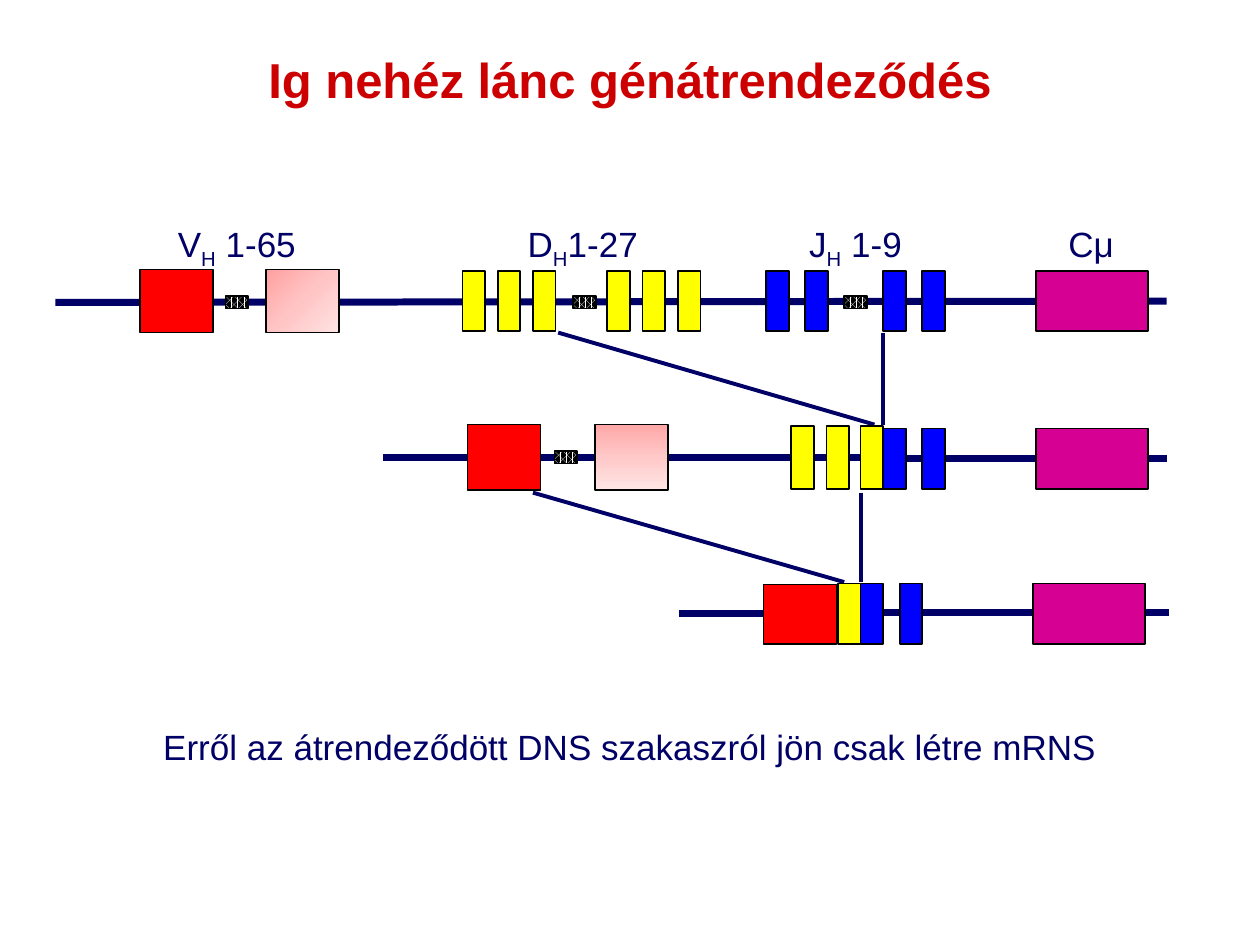
from copy import deepcopy

from pptx import Presentation
from pptx.dml.color import RGBColor
from pptx.enum.dml import MSO_PATTERN
from pptx.enum.shapes import MSO_CONNECTOR, MSO_SHAPE
from pptx.enum.text import PP_ALIGN
from pptx.oxml.ns import qn
from pptx.util import Inches, Pt
from lxml import etree

RECT = MSO_SHAPE.RECTANGLE
LINE = MSO_CONNECTOR.STRAIGHT
DOTS = MSO_PATTERN.PERCENT_70
CENTER = PP_ALIGN.CENTER

COLS, ROWS = 100, 75
CELL = Inches(0.1)
SEG = 1.8  # width of a D or J segment, in columns
GENE = 5.8  # width of a V gene
CONST = 8.9  # width of the constant gene

HUES = {
    "title": "CC0000", "ink": "000066", "edge": "000202",
    "V": "FF0000", "D": "FFFF00", "J": "0000FF", "C": "D60093",
    "white": "FFFFFF", "black": "000000",
}
FADES = {
    "top": ("FFA0A0", "FFC5C5", "FFE3E3"),
    "mid": ("FFA7A7", "FFC9C9", "FFE5E5"),
}


def hue(name):
    return RGBColor.from_string(HUES[name])


def cells(*sizes):
    """Turn columns and rows into slide lengths."""
    return [round(size * CELL) for size in sizes]


def add_text(slide, at, parts, size=20, color="ink", bold=False, wrap=False):
    """Write one centred paragraph; every second part is a subscript."""
    frame = slide.shapes.add_textbox(*cells(*at)).text_frame
    frame.word_wrap = wrap
    para = frame.paragraphs[0]
    para.alignment = CENTER
    font = para.font
    font.name, font.size, font.bold = "Arial", Pt(size), bold
    font.color.rgb = hue(color)
    for i, part in enumerate(parts):
        run = para.add_run()
        run.text = part
        if i % 2:
            run._r.get_or_add_rPr().set("baseline", "-25000")


def add_line(slide, start, end, width):
    line = slide.shapes.add_connector(LINE, *cells(*start, *end))
    line.line.color.rgb = hue("ink")
    line.line.width = Pt(width)
    etree.SubElement(line._element.spPr, qn("a:effectLst"))


def add_box(slide, left, top, width, height):
    box = slide.shapes.add_shape(RECT, *cells(left, top, width, height))
    box.shadow.inherit = False
    box.line.color.rgb = hue("edge")
    box.line.width = Pt(1)
    return box


def add_genes(slide, kind, lefts, top, width, height):
    for left in lefts:
        fill = add_box(slide, left, top, width, height).fill
        fill.solid()
        fill.fore_color.rgb = hue(kind)


def add_gaps(slide, lefts, top):
    """Dotted marks stand for the genes left out."""
    for left in lefts:
        fill = add_box(slide, left, top, SEG, 1).fill
        fill.patterned()
        fill.pattern = DOTS
        fill.fore_color.rgb = hue("white")
        fill.back_color.rgb = hue("black")


def add_fade(slide, at, tones, radial=False):
    box = add_box(slide, *at)
    box.fill.gradient()
    box.fill.gradient_angle = 270
    grad = box._element.spPr.find(qn("a:gradFill"))
    first = grad.find(qn("a:gsLst"))[0]
    middle = deepcopy(first)
    middle.set("pos", "50000")
    first.addnext(middle)
    for stop, tone in zip(box.fill.gradient_stops, FADES[tones]):
        stop.color.rgb = RGBColor.from_string(tone)
    if radial:
        grad.remove(grad.find(qn("a:lin")))
        ring = etree.SubElement(grad, qn("a:path"), path="circle")
        etree.SubElement(ring, qn("a:fillToRect"), r="100000", b="100000")


def add_germline(slide):
    add_line(slide, (4.4, 24), (92.6, 23.9), 4)
    labels = (
        (13, 11.6, ["V", "H", " 1-65"]),
        (40.8, 10.9, ["D", "H", "1-27"]),
        (63.2, 9.4, ["J", "H", " 1-9"]),
        (83.8, 5.6, ["Cμ"]),
    )
    for left, width, parts in labels:
        add_text(slide, (left, 17.2, width, 4.3), parts)
    add_genes(slide, "V", [11.1], 21.4, GENE, 5)
    add_fade(slide, (21.1, 21.4, GENE, 5), "top", radial=True)
    yellow = [start + 2.8 * i for start in (36.7, 48.2) for i in range(3)]
    add_genes(slide, "D", yellow, 21.5, SEG, 4.8)
    blue = [60.8 + 3.1 * i for i in (0, 1, 3, 4)]
    add_genes(slide, "J", blue, 21.5, SEG, 4.8)
    add_genes(slide, "C", [82.2], 21.5, CONST, 4.8)
    add_gaps(slide, [17.9, 45.5, 67], 23.5)


def add_joined(slide):
    """The row where D meets J."""
    add_line(slide, (30.4, 36.3), (70.1, 36.3), 4)
    add_line(slide, (70.1, 36.4), (92.6, 36.4), 4)
    add_genes(slide, "V", [37.1], 33.7, GENE, 5.2)
    add_fade(slide, (47.2, 33.7, GENE, 5.2), "mid")
    add_genes(slide, "J", [70.1, 73.2], 34, SEG, 4.8)
    add_genes(slide, "D", [62.8, 65.6, 68.3], 33.8, SEG, 5)
    add_genes(slide, "C", [82.2], 34, CONST, 4.8)
    add_gaps(slide, [44], 35.8)


def add_final(slide):
    """The row where V meets DJ."""
    add_line(slide, (53.9, 48.7), (66, 48.7), 4)
    add_line(slide, (68.3, 48.6), (92.8, 48.6), 4)
    add_genes(slide, "J", [68.3, 71.4], 46.3, SEG, 4.8)
    add_genes(slide, "D", [66.5], 46.3, SEG, 4.8)
    add_genes(slide, "V", [60.6], 46.4, GENE, 4.7)
    add_genes(slide, "C", [82], 46.3, CONST, 4.8)


def add_folds(slide):
    """Slanted and upright lines bound the stretch that is cut out."""
    for left, right, foot, top, base in (
        (44.3, 70.1, 69.4, 26.4, 33.7),
        (42.3, 68.3, 67, 39.1, 46.2),
    ):
        add_line(slide, (left, top), (foot, base), 2.25)
        add_line(slide, (right, top), (right, base), 2.25)


def main():
    deck = Presentation()
    deck.slide_width, deck.slide_height = cells(COLS, ROWS)
    slide = deck.slides.add_slide(deck.slide_layouts[6])
    add_text(slide, (6.6, 3.4, 86.8, 5.7), ["Ig nehéz lánc génátrendeződés"],
             size=28, color="title", bold=True, wrap=True)
    add_germline(slide)
    add_folds(slide)
    add_joined(slide)
    add_final(slide)
    add_text(slide, (11, 57.1, 78, 4.4),
             ["Erről az átrendeződött DNS szakaszról jön csak létre mRNS"],
             wrap=True)
    deck.save("out.pptx")


if __name__ == "__main__":
    main()
